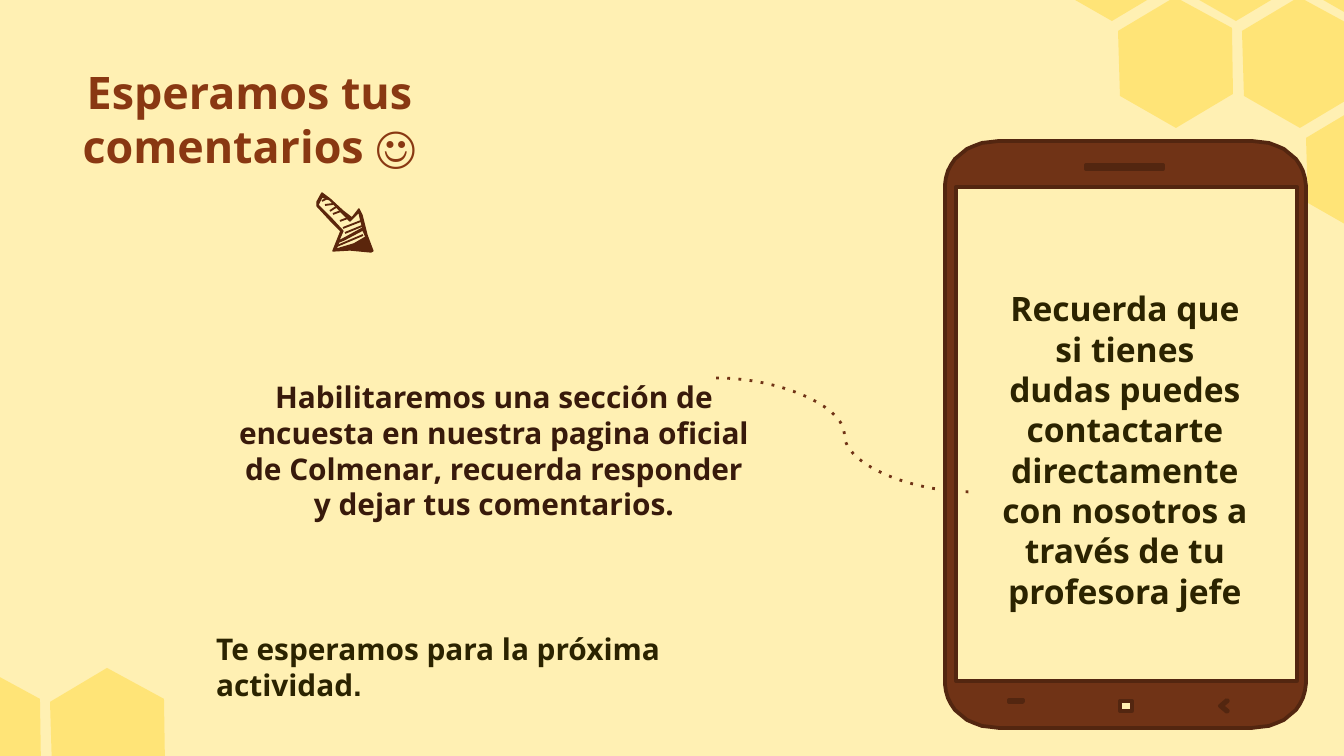
import math

from lxml import etree
from pptx import Presentation
from pptx import util as u
from pptx.dml.color import RGBColor
from pptx.enum import shapes, text
from pptx.oxml.ns import qn

EMU_PER_PX = 914400 / 134.4
COLORS = {
    "background": "FFF0B3",
    "honeycomb": "FFDB45",
    "title": "893812",
    "survey": "381A0B",
    "note": "2B2300",
    "phone": "703316",
    "phone_edge": "532610",
    "sketch": "5B260C",
}
HEXAGON = [(57, 0), (0, 34), (2, 99), (58, 131), (115, 97), (114, 31)]
HEXAGON_STEP = 124
ROW_SHIFT = (64, 107)

ARROW_OUTLINE = [
    (322, 193), (330, 199), (343, 211), (352, 218), (359, 209), (362, 215),
    (367, 235), (373, 251), (371, 252), (350, 250), (333, 251), (341, 231),
    (330, 220), (317, 206), (317, 202),
]
ARROW_BODY = [
    (322, 197), (330, 200), (343, 214), (350, 221), (359, 212), (361, 221),
    (363, 228), (341, 240), (339, 240), (343, 231), (330, 217), (318, 205),
]
ARROW_HEAD = [
    (363, 230), (366, 237), (354, 244), (337, 249), (336, 249), (339, 242),
    (344, 240),
]
ARROW_HATCHES = [
    (322, 201, 328, 198), (325, 205, 333, 204), (330, 211, 336, 207),
    (333, 214, 341, 211), (340, 221, 348, 218), (343, 228, 361, 221),
    (345, 233, 362, 226), (337, 246, 363, 235), (349, 247, 367, 240),
    (356, 248, 368, 244),
]


def px(length):
    return u.Emu(round(length * EMU_PER_PX))


def rgb(name):
    return RGBColor.from_string(COLORS[name])


def add_outline(slide, contours, fill, edge=None, width=1):
    """Draw closed contours as one shape; inner contours become holes."""
    first, *holes = contours
    builder = slide.shapes.build_freeform(*first[0], scale=EMU_PER_PX)
    builder.add_line_segments(first[1:])
    for hole in holes:
        builder.move_to(*hole[0])
        builder.add_line_segments(hole[1:])
    outline = builder.convert_to_shape()
    outline.shadow.inherit = False
    outline.fill.solid()
    outline.fill.fore_color.rgb = rgb(fill)
    if edge:
        outline.line.color.rgb = rgb(edge)
        outline.line.width = u.Pt(width)
    else:
        outline.line.fill.background()
    return outline


def add_line(slide, kind, ends, color, width, dash=None):
    line = slide.shapes.add_connector(kind, *map(px, ends))
    line.line.color.rgb = rgb(color)
    line.line.width = u.Pt(width)
    properties = line.element.spPr
    if dash:
        etree.SubElement(properties.find(qn("a:ln")), qn("a:prstDash"), val=dash)
    etree.SubElement(properties, qn("a:effectLst"))


def add_text(slide, box, pieces, size, color, align, anchor, inset):
    """Add one paragraph made of (wording, font name) pieces."""
    frame = slide.shapes.add_textbox(*map(px, box)).text_frame
    frame.word_wrap = True
    frame.vertical_anchor = anchor
    frame.margin_top = frame.margin_bottom = px(inset)
    paragraph = frame.paragraphs[0]
    paragraph.alignment = align
    for wording, font_name in pieces:
        run = paragraph.add_run()
        run.text = wording
        run.font.name = font_name
        run.font.size = u.Pt(size)
        run.font.bold = True
        run.font.color.rgb = rgb(color)


def add_hexagon(slide, left, top):
    cell = add_outline(slide, [[(left + x, top + y) for x, y in HEXAGON]], "honeycomb")
    color = cell.fill._xPr.find(qn("a:solidFill"))[0]
    etree.SubElement(color, qn("a:alpha"), val="54000")


def add_honeycombs(slide):
    for row, columns in enumerate([(0, 1, 2), (0, 1), (1,)]):
        for column in columns:
            add_hexagon(slide, 1054 + row * ROW_SHIFT[0] + column * HEXAGON_STEP,
                        -110 + row * ROW_SHIFT[1])
    for column in range(2):
        add_hexagon(slide, -74 + column * HEXAGON_STEP, 668)


def rectangle(left, top, right, bottom):
    return [(left, top), (right, top), (right, bottom), (left, bottom)]


def rounded_rectangle(left, top, right, bottom, radius_x, radius_y):
    centers = [(right - radius_x, bottom - radius_y), (left + radius_x, bottom - radius_y),
               (left + radius_x, top + radius_y), (right - radius_x, top + radius_y)]
    return [
        (x + radius_x * math.cos(math.radians(angle)),
         y + radius_y * math.sin(math.radians(angle)))
        for corner, (x, y) in enumerate(centers)
        for angle in range(corner * 90, corner * 90 + 91, 9)
    ]


def add_phone(slide):
    body = rounded_rectangle(945, 141, 1306, 728, 54, 44)
    screen = rectangle(956, 187, 1297, 681)
    speaker = rectangle(1086, 165, 1163, 169)
    menu_key = rectangle(1009, 700, 1023, 702)
    home_key = rectangle(1120, 701, 1132, 711)
    back_key = [(1227, 700), (1220, 706), (1227, 712), (1228, 711), (1222, 706), (1228, 701)]
    add_outline(slide, [body, screen, speaker, menu_key, home_key, back_key],
                "phone", "phone_edge", 2)


def add_sketched_arrow(slide):
    add_outline(slide, [ARROW_OUTLINE, ARROW_BODY, ARROW_HEAD], "sketch", "sketch", 0.75)
    for hatch in ARROW_HATCHES:
        add_line(slide, shapes.MSO_CONNECTOR.STRAIGHT, hatch, "sketch", 1)


def main():
    deck = Presentation()
    deck.slide_width, deck.slide_height = px(1344), px(756)
    slide = deck.slides.add_slide(deck.slide_layouts[6])
    slide.background.fill.solid()
    slide.background.fill.fore_color.rgb = rgb("background")

    center, left = text.PP_ALIGN.CENTER, text.PP_ALIGN.LEFT
    top, bottom = text.MSO_ANCHOR.TOP, text.MSO_ANCHOR.BOTTOM
    add_honeycombs(slide)
    add_text(slide, (69, 52, 361, 129), [("Esperamos tus comentarios ☺", "Open Sans")],
             24, "title", center, top, 13)
    add_text(slide, (222, 335, 544, 200),
             [("Habilitaremos una sección de encuesta en nuestra pagina oficial de Colmenar, "
               "recuerda responder y dejar tus comentarios.", "Open Sans")],
             16, "survey", center, bottom, 13)
    add_text(slide, (989, 262, 272, 362),
             [("Recuerda que si tienes dudas puedes contactarte directamente con nosotros "
               "a través de tu profesora jefe", "Open Sans")],
             18, "note", center, bottom, 13)
    add_line(slide, shapes.MSO_CONNECTOR.CURVE, (716, 378, 973, 492), "phone", 1.5, "dot")
    add_sketched_arrow(slide)
    add_phone(slide)
    add_text(slide, (203, 624, 508, 86),
             [("Te esperamos para la próxima actividad", "Open Sans"), (".", "Arial")],
             16, "note", left, top, 7)
    deck.save("out.pptx")


if __name__ == "__main__":
    main()
